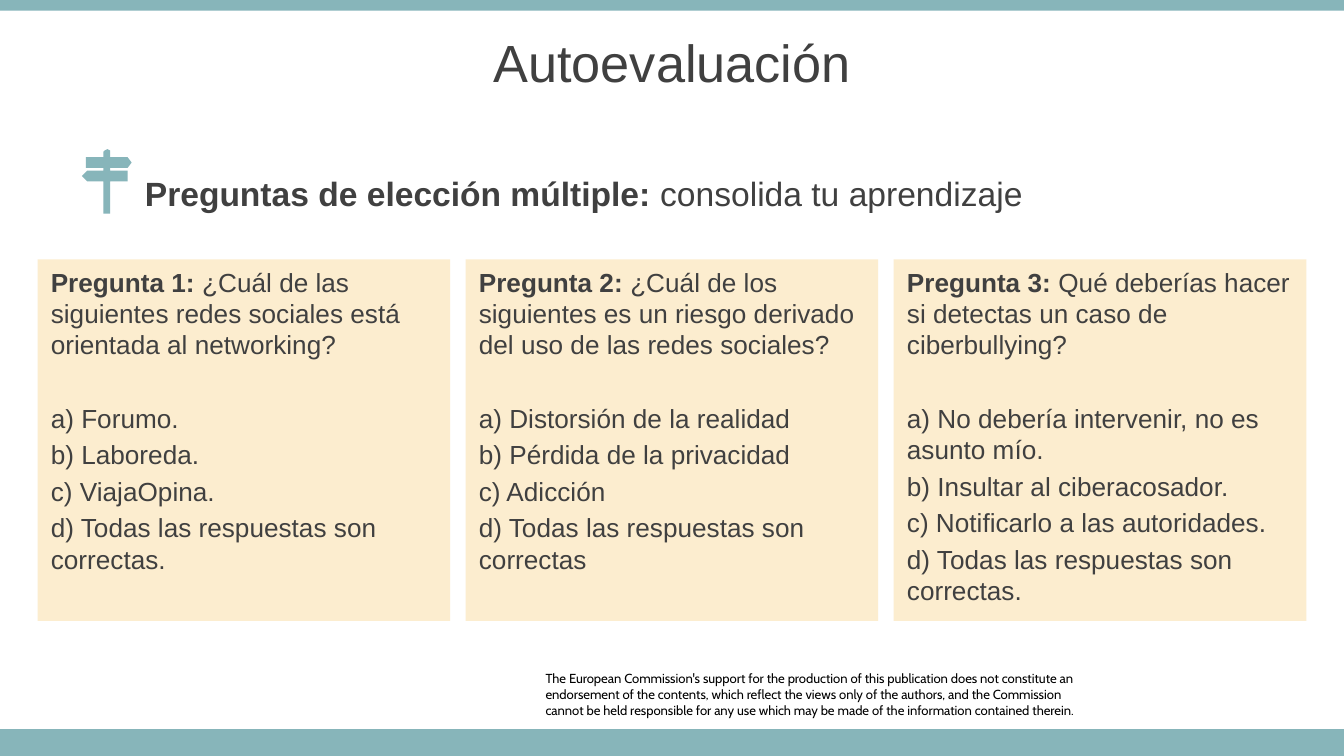
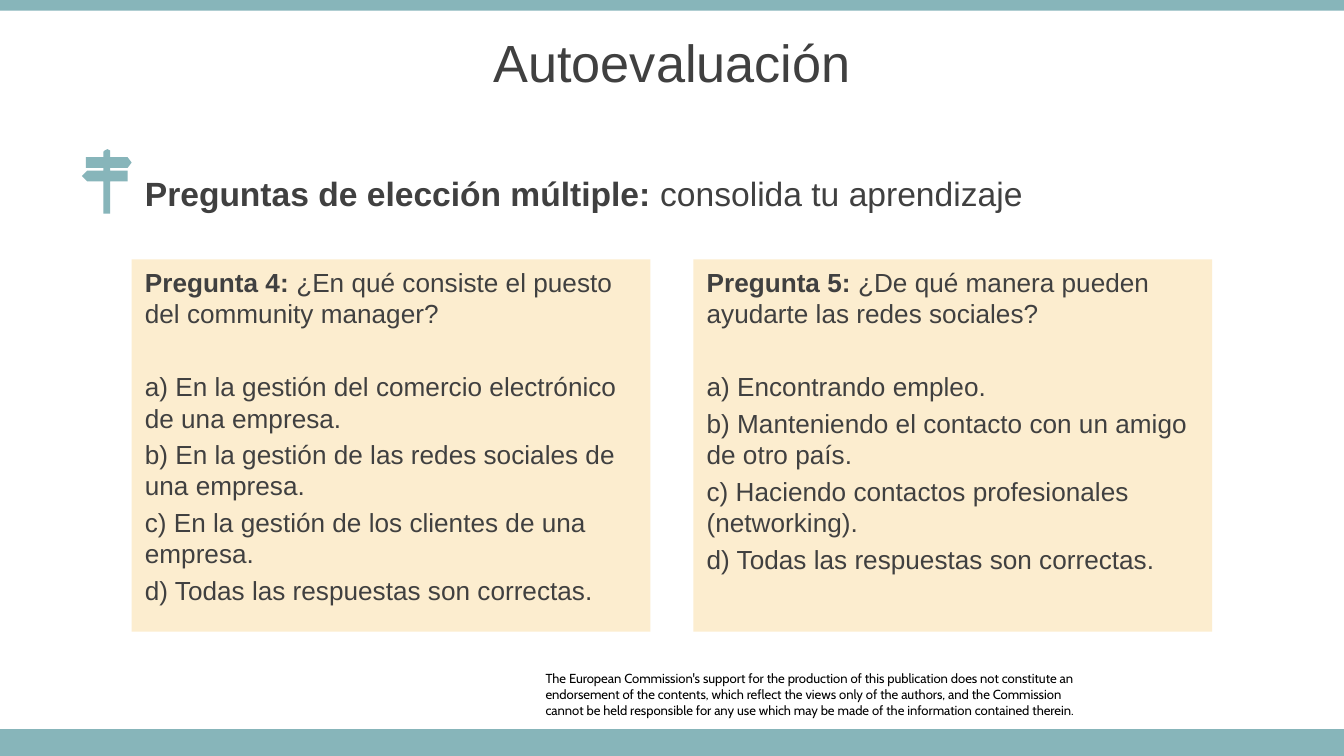
from dataclasses import dataclass

from pptx import Presentation
from pptx.dml.color import RGBColor
from pptx.enum.shapes import MSO_SHAPE
from pptx.enum.text import MSO_ANCHOR, PP_ALIGN
from pptx.util import Inches, Pt


@dataclass(frozen=True)
class Theme:
    teal: RGBColor = RGBColor(0x87, 0xB5, 0xBA)
    cream: RGBColor = RGBColor(0xFC, 0xED, 0xCF)
    ink: RGBColor = RGBColor(0x40, 0x40, 0x40)
    black: RGBColor = RGBColor(0, 0, 0)
    font: str = "Arial"
    footer_font: str = "Cabin"
    title_size: int = 28
    heading_size: int = 18
    body_size: int = 14
    footer_size: int = 7


THEME = Theme()
WIDTH = 10
HEIGHT = WIDTH * 9 / 16
CARD_TOP = 1.93
OPTION_GAP = 0.2 * THEME.body_size
QUESTION_GAP = 1.6 * THEME.body_size

TITLE = "Autoevaluación"
HEADING = ("Preguntas de elección múltiple: ", "consolida tu aprendizaje")
DISCLAIMER = (
    "The European Commission's support for the production of this publication does not "
    "constitute an endorsement of the contents, which reflect the views only of the "
    "authors, and the Commission",
    "cannot be held responsible for any use which may be made of the information "
    "contained therein.",
)

# Signpost outline in hundredths of an inch.
SIGNPOST = [
    (80, 111), (81.5, 111.5), (82, 113), (82, 117), (95, 117), (98, 121), (95, 125),
    (82, 125), (82, 127), (95, 127), (95, 135), (82, 135), (82, 159), (77, 159),
    (77, 135), (65, 135), (61, 131), (65, 127), (77, 127), (77, 125), (64, 125),
    (64, 117), (77, 117), (77, 113), (77.5, 111.5),
]

QUIZ_SLIDES = [
    {
        "heading_width": 7.24, "margin": 0.28, "card_size": (3.07, 2.69),
        "questions": [
            ("Pregunta 1: ",
             "¿Cuál de las siguientes redes sociales está orientada al networking?",
             ["a) Forumo.", "b) Laboreda.", "c) ViajaOpina.",
              "d) Todas las respuestas son correctas."]),
            ("Pregunta 2: ",
             "¿Cuál de los siguientes es un riesgo derivado del uso de las redes sociales?",
             ["a) Distorsión de la realidad", "b) Pérdida de la privacidad",
              "c) Adicción", "d) Todas las respuestas son correctas"]),
            ("Pregunta 3: ",
             "Qué deberías hacer si detectas un caso de ciberbullying?",
             ["a) No debería intervenir, no es asunto mío.",
              "b) Insultar al ciberacosador.", "c) Notificarlo a las autoridades.",
              "d) Todas las respuestas son correctas."]),
        ],
    },
    {
        "heading_width": 7.56, "margin": 0.98, "card_size": (3.86, 2.77),
        "questions": [
            ("Pregunta 4: ", "¿En qué consiste el puesto del community manager?",
             ["a) En la gestión del comercio electrónico de una empresa.",
              "b) En la gestión de las redes sociales de una empresa.",
              "c) En la gestión de los clientes de una empresa.",
              "d) Todas las respuestas son correctas."]),
            ("Pregunta 5: ", "¿De qué manera pueden ayudarte las redes sociales?",
             ["a) Encontrando empleo.",
              "b) Manteniendo el contacto con un amigo de otro país.",
              "c) Haciendo contactos profesionales (networking).",
              "d) Todas las respuestas son correctas."]),
        ],
    },
]


def set_attributes(target, values):
    for name, value in values.items():
        setattr(target, name, value)


def add_run(paragraph, text, size, color=THEME.ink, font=THEME.font, bold=False):
    run = paragraph.add_run()
    run.text = text
    set_attributes(run.font, {"name": font, "size": Pt(size), "bold": bold})
    run.font.color.rgb = color


def add_lead_runs(paragraph, lead, text, size):
    """Write a bold lead followed by plain text."""
    add_run(paragraph, lead, size, bold=True)
    add_run(paragraph, text, size)


def paint(shape, color):
    shape.shadow.inherit = False
    shape.fill.solid()
    shape.fill.fore_color.rgb = color
    shape.line.fill.background()


def add_rectangle(slide, left, top, width, height, color):
    box = map(Inches, (left, top, width, height))
    shape = slide.shapes.add_shape(MSO_SHAPE.RECTANGLE, *box)
    paint(shape, color)
    return shape


def add_text_frame(slide, left, top, width, height):
    box = map(Inches, (left, top, width, height))
    frame = slide.shapes.add_textbox(*box).text_frame
    frame.word_wrap = True
    return frame


def add_footer(slide):
    frame = add_text_frame(slide, 4.06, 4.99, 4.17, 0.35)
    sides = ("left", "top", "right", "bottom")
    set_attributes(frame, {f"margin_{side}": 0 for side in sides})
    for index, text in enumerate(DISCLAIMER):
        paragraph = frame.add_paragraph() if index else frame.paragraphs[0]
        add_run(paragraph, text, THEME.footer_size, THEME.black, THEME.footer_font)


def add_bands(slide):
    for top, height in ((HEIGHT - 0.2, 0.2), (0, 0.08)):
        add_rectangle(slide, 0, top, WIDTH, height, THEME.teal)


def add_title(slide):
    title = slide.shapes.title
    set_attributes(title, {
        "left": 0, "top": Inches(0.14), "width": Inches(WIDTH), "height": Inches(0.63),
    })
    title.text_frame.vertical_anchor = MSO_ANCHOR.MIDDLE
    paragraph = title.text_frame.paragraphs[0]
    paragraph.alignment = PP_ALIGN.CENTER
    add_run(paragraph, TITLE, THEME.title_size)


def add_heading(slide, width):
    frame = add_text_frame(slide, 0.98, 1.28, width, 0.31)
    frame.vertical_anchor = MSO_ANCHOR.MIDDLE
    add_lead_runs(frame.paragraphs[0], *HEADING, THEME.heading_size)


def add_signpost(slide):
    start, *corners = SIGNPOST
    builder = slide.shapes.build_freeform(*start, scale=Inches(0.01))
    builder.add_line_segments(corners, close=True)
    paint(builder.convert_to_shape(), THEME.teal)


def add_question_card(slide, left, size, question):
    lead, text, options = question
    card = add_rectangle(slide, left, CARD_TOP, *size, THEME.cream)
    frame = card.text_frame
    set_attributes(frame, {"word_wrap": True, "vertical_anchor": MSO_ANCHOR.TOP})
    paragraph = frame.paragraphs[0]
    paragraph.alignment = PP_ALIGN.LEFT
    add_lead_runs(paragraph, lead, text, THEME.body_size)
    for index, option in enumerate(options):
        paragraph = frame.add_paragraph()
        gap = OPTION_GAP if index else QUESTION_GAP
        set_attributes(paragraph, {"alignment": PP_ALIGN.LEFT, "space_before": Pt(gap)})
        add_run(paragraph, option, THEME.body_size)


def add_question_cards(slide, margin, size, questions):
    """Spread the cards evenly between equal side margins."""
    step = (WIDTH - 2 * margin - size[0]) / (len(questions) - 1)
    for index, question in enumerate(questions):
        add_question_card(slide, margin + index * step, size, question)


def add_quiz_slide(presentation, quiz):
    slide = presentation.slides.add_slide(presentation.slide_layouts[5])
    add_footer(slide)
    add_bands(slide)
    add_title(slide)
    add_heading(slide, quiz["heading_width"])
    add_signpost(slide)
    add_question_cards(slide, quiz["margin"], quiz["card_size"], quiz["questions"])


def main():
    presentation = Presentation()
    presentation.slide_width = Inches(WIDTH)
    presentation.slide_height = Inches(HEIGHT)
    for quiz in QUIZ_SLIDES:
        add_quiz_slide(presentation, quiz)
    presentation.save("out.pptx")


if __name__ == "__main__":
    main()
